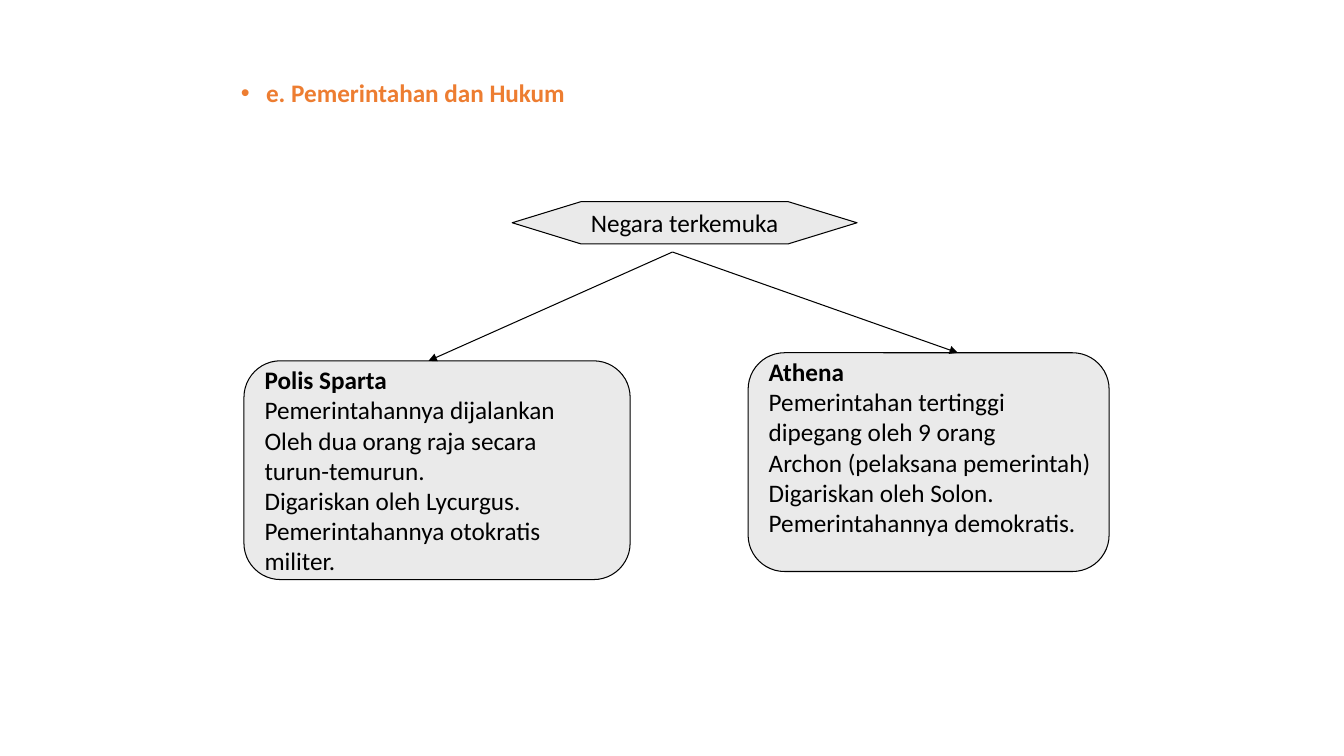
from dataclasses import dataclass

from lxml import etree
from pptx import Presentation
from pptx.dml.color import RGBColor
from pptx.enum.shapes import MSO_CONNECTOR, MSO_SHAPE
from pptx.enum.text import MSO_ANCHOR, PP_ALIGN
from pptx.oxml.ns import qn
from pptx.util import Inches, Pt

HEXAGON = MSO_SHAPE.FLOWCHART_PREPARATION
ROUNDED = MSO_SHAPE.FLOWCHART_ALTERNATE_PROCESS
STRAIGHT = MSO_CONNECTOR.STRAIGHT
MIDDLE = MSO_ANCHOR.MIDDLE
LEFT, CENTER = PP_ALIGN.LEFT, PP_ALIGN.CENTER


@dataclass(frozen=True)
class Theme:
    font: str = "Calibri"
    size: Pt = Pt(18)
    line_width: Pt = Pt(0.75)
    accent: RGBColor = RGBColor(0xED, 0x7D, 0x31)
    ink: RGBColor = RGBColor(0, 0, 0)
    fill: RGBColor = RGBColor(0xEA, 0xEA, 0xEA)


@dataclass(frozen=True)
class Node:
    kind: MSO_SHAPE
    left: float
    top: float
    width: float
    height: float
    lines: tuple[str, ...]
    bold_first: bool = True
    align: PP_ALIGN = LEFT
    bottom_inset: float = 0.05


@dataclass(frozen=True)
class Arrow:
    end_x: float
    end_y: float


THEME = Theme()
FORK = (6.67, 2.5)

NODES = (
    Node(HEXAGON, 5.08, 2, 3.42, 0.42, ("Negara terkemuka",), False, CENTER),
    Node(ROUNDED, 2.42, 3.58, 3.83, 2.17, (
        "Polis Sparta",
        "Pemerintahannya dijalankan",
        "Oleh dua orang raja secara",
        "turun-temurun.",
        "Digariskan oleh Lycurgus.",
        "Pemerintahannya otokratis",
        "militer.",
    )),
    Node(ROUNDED, 7.42, 3.5, 3.58, 2.17, (
        "Athena",
        "Pemerintahan tertinggi",
        "dipegang oleh 9 orang",
        "Archon (pelaksana pemerintah)",
        "Digariskan oleh Solon.",
        "Pemerintahannya demokratis.",
    ), bottom_inset=0.35),
)

ARROWS = (Arrow(4.25, 3.58), Arrow(9.5, 3.5))


def style_text(p, color: RGBColor, bold: bool) -> None:
    for r in p.runs:
        r.font.name = THEME.font
        r.font.size = THEME.size
        r.font.bold = bold
        r.font.color.rgb = color


def add_heading(s, text: str) -> None:
    tf = s.shapes.add_textbox(Inches(2.29), Inches(0.75),
                              Inches(8.75), Inches(5.83)).text_frame
    tf.word_wrap = True
    p = tf.paragraphs[0]
    p.text = text
    p.line_spacing = 0.9
    pPr = p._p.get_or_add_pPr()
    pPr.set("marL", str(Inches(0.25)))
    pPr.set("indent", str(Inches(-0.25)))
    etree.SubElement(pPr, qn("a:buFont"), typeface="Arial")
    etree.SubElement(pPr, qn("a:buChar"), char="•")
    style_text(p, THEME.accent, True)


def add_node(s, node: Node) -> None:
    sp = s.shapes.add_shape(node.kind, Inches(node.left), Inches(node.top),
                            Inches(node.width), Inches(node.height))
    sp.shadow.inherit = False
    sp.fill.solid()
    sp.fill.fore_color.rgb = THEME.fill
    sp.line.color.rgb = THEME.ink
    sp.line.width = THEME.line_width
    tf = sp.text_frame
    tf.word_wrap = False
    tf.vertical_anchor = MIDDLE
    tf.margin_bottom = Inches(node.bottom_inset)
    tf.text = "\n".join(node.lines)
    for i, p in enumerate(tf.paragraphs):
        p.alignment = node.align
        style_text(p, THEME.ink, node.bold_first and i == 0)


def add_arrow(s, arrow: Arrow) -> None:
    line = s.shapes.add_connector(STRAIGHT, Inches(FORK[0]), Inches(FORK[1]),
                                  Inches(arrow.end_x), Inches(arrow.end_y))
    line.line.color.rgb = THEME.ink
    line.line.width = THEME.line_width
    etree.SubElement(line.line._get_or_add_ln(), qn("a:tailEnd"), type="triangle")
    etree.SubElement(line._element.spPr, qn("a:effectLst"))


def main() -> None:
    prs = Presentation()
    prs.slide_width, prs.slide_height = Inches(13.33), Inches(7.5)
    s = prs.slides.add_slide(prs.slide_layouts[6])

    # Heading
    add_heading(s, "e. Pemerintahan dan Hukum")

    # Topic and the two city-states
    for node in NODES:
        add_node(s, node)

    # Branches from the topic
    for arrow in ARROWS:
        add_arrow(s, arrow)

    prs.save("out.pptx")


if __name__ == "__main__":
    main()
